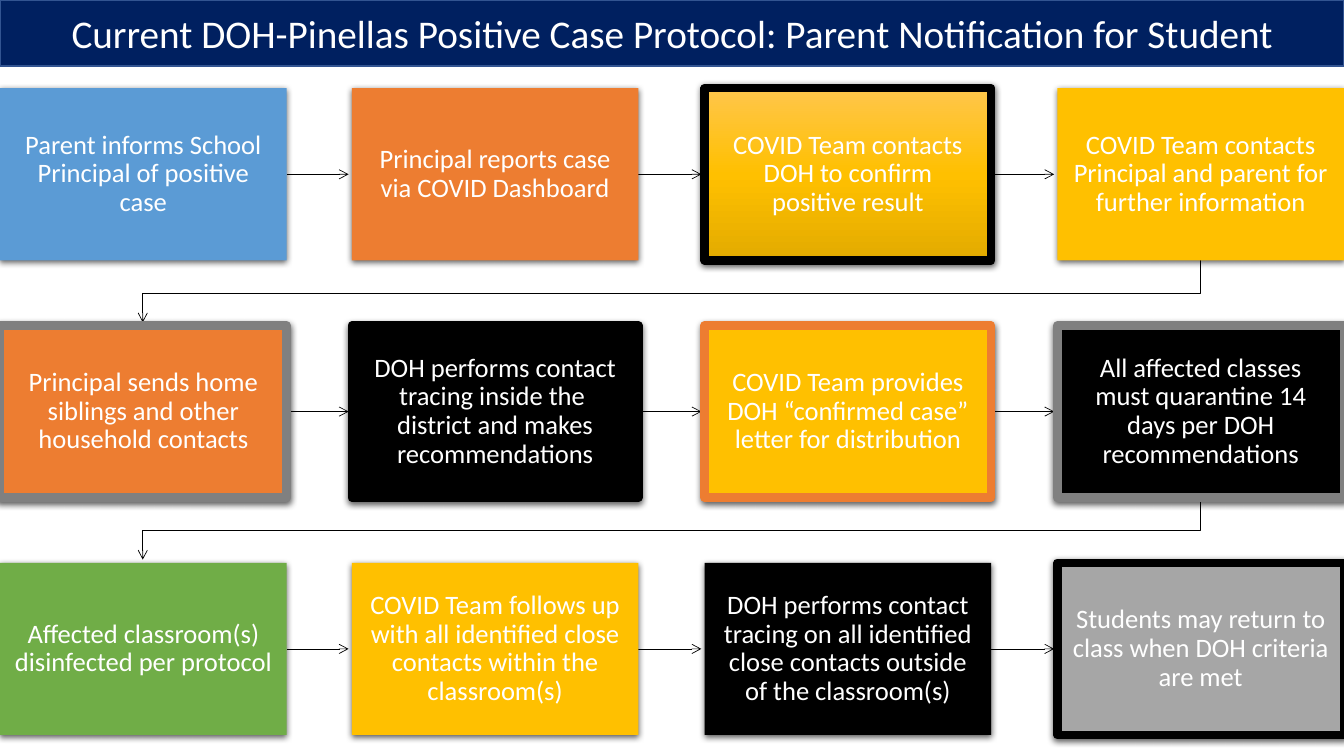
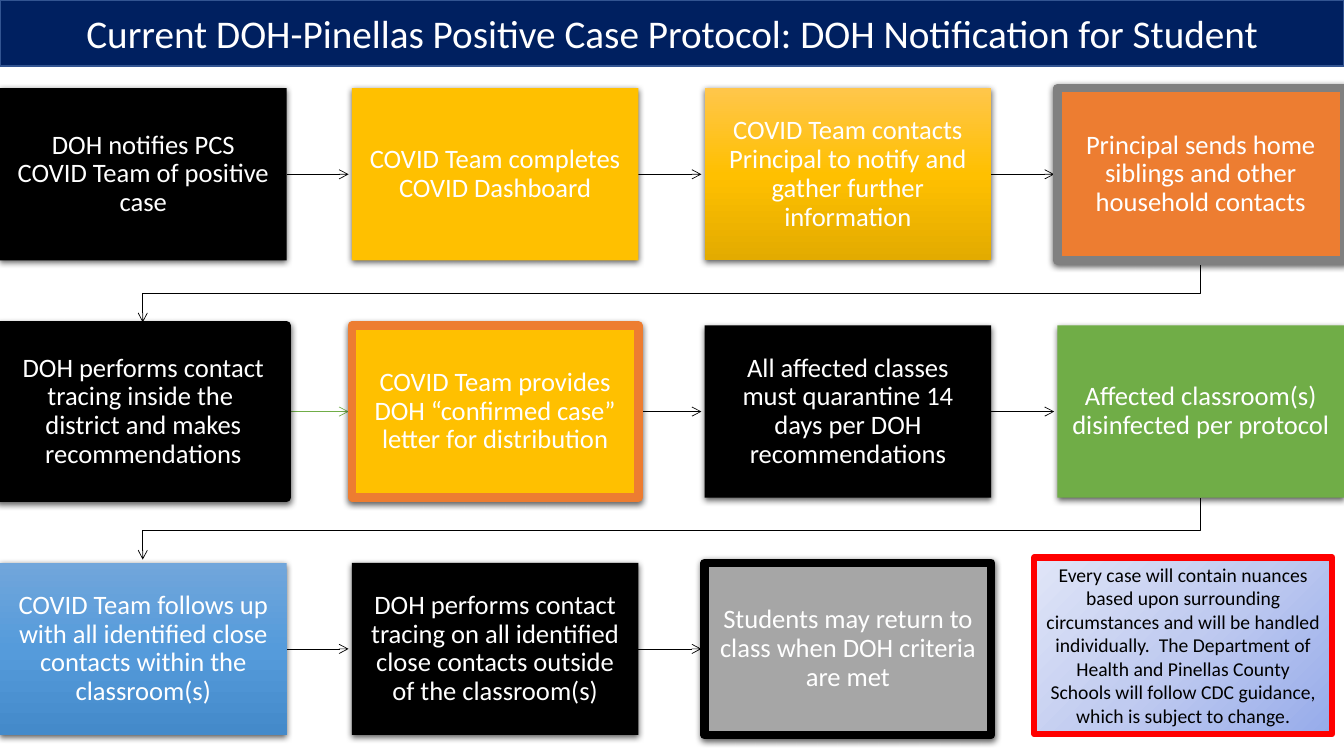
import dataclasses
import typing

import lxml.etree
import pptx
import pptx.dml.color
import pptx.enum.shapes
import pptx.enum.text
import pptx.oxml.ns
import pptx.util

PX = 9525
WIDE, HIGH = 1280, 720
COLS = 4
CARD_W, CARD_H = 273, 164
TOP, STEP = 84, 226
GAP = STEP - CARD_H
SHORT = 3
FONT = "Calibri"

BLACK, WHITE = "000000", "FFFFFF"
NAVY, RIM, RED = "002060", "325491", "FF0000"
BLUE, ORANGE, GOLD, GREEN = "5B9BD5", "ED7D31", "FFC000", "70AD47"
GRAY, SILVER = "808080", "A6A6A6"

Anchor = pptx.enum.text.MSO_ANCHOR
qn = pptx.oxml.ns.qn


@dataclasses.dataclass(frozen=True)
class Blend:
    stops: tuple[str, str, str]
    angle: int = 90


Paint = typing.Union[str, Blend]
Point = tuple[int, int]


@dataclasses.dataclass(frozen=True)
class Card:
    text: str
    fill: Paint
    edge: typing.Optional[str] = None
    arrow: str = BLACK


GOLD_FADE = Blend(("FFC64B", GOLD, "E3AB00"))
BLUE_FADE = Blend(("71A6DB", "559BDB", "448ACA"))
NOTE_FADE = Blend(("96ABEA", "C0CBF0", "E0E5F7"), 225)

HOME = Card("Principal sends home siblings and other household contacts", ORANGE, GRAY)
TRACE = Card("DOH performs contact tracing inside the  district and makes recommendations", BLACK, BLACK)
LETTER = Card("COVID Team provides DOH “confirmed case” letter for distribution", GOLD, ORANGE)
STAY = Card("All affected classes must quarantine 14 days per DOH recommendations", BLACK)
CLEAN = Card("Affected classroom(s) disinfected per protocol", GREEN)
FOLLOW = Card("COVID Team follows up with all identified close contacts within the classroom(s)", GOLD)
OUTER = Card("DOH performs contact tracing on all identified close contacts outside of the classroom(s)", BLACK)
BACK = Card("Students may return to class when DOH criteria are met", SILVER, BLACK)

PARENT = [
    Card("Parent informs School Principal of positive case", BLUE),
    Card("Principal reports case via COVID Dashboard", ORANGE),
    Card("COVID Team contacts DOH to confirm positive result", GOLD_FADE, BLACK),
    Card("COVID Team contacts Principal and parent for further information", GOLD),
    HOME,
    TRACE,
    LETTER,
    dataclasses.replace(STAY, edge=GRAY),
    CLEAN,
    FOLLOW,
    OUTER,
    BACK,
]
HEALTH = [
    Card("DOH notifies PCS COVID Team of positive case", BLACK),
    Card("COVID Team completes COVID Dashboard", GOLD),
    Card("COVID Team contacts Principal to notify and gather further information", GOLD_FADE),
    HOME,
    dataclasses.replace(TRACE, arrow=GREEN),
    LETTER,
    STAY,
    CLEAN,
    dataclasses.replace(FOLLOW, fill=BLUE_FADE),
    OUTER,
    BACK,
]
NOTE = (
    "Every case will contain nuances based upon surrounding circumstances "
    "and will be handled individually.  The Department of Health and Pinellas "
    "County Schools will follow CDC guidance, which is subject to change."
)


def px(count: int) -> pptx.util.Emu:
    return pptx.util.Emu(count * PX)


def rgb(code: str) -> pptx.dml.color.RGBColor:
    return pptx.dml.color.RGBColor.from_string(code)


def add(parent, tag: str, **attrs: object):
    return lxml.etree.SubElement(parent, qn(tag), {key: str(val) for key, val in attrs.items()})


def paint(shape, fill: Paint) -> None:
    if isinstance(fill, str):
        shape.fill.solid()
        shape.fill.fore_color.rgb = rgb(fill)
        return
    shape.fill.gradient()
    shape.fill.gradient_angle = 360 - fill.angle
    stops = shape._element.spPr.find(f"{qn('a:gradFill')}/{qn('a:gsLst')}")
    for old in list(stops):
        stops.remove(old)
    for rank, code in enumerate(fill.stops):
        stop = add(stops, "a:gs", pos=rank * 50000)
        add(stop, "a:srgbClr", val=code)


def box(slide, left: int, top: int, wide: int, high: int, fill: Paint,
        edge: typing.Optional[str] = None, weight: float = 1):
    shape = slide.shapes.add_shape(
        pptx.enum.shapes.MSO_SHAPE.RECTANGLE, px(left), px(top), px(wide), px(high))
    shape.shadow.inherit = False
    paint(shape, fill)
    if edge:
        shape.line.color.rgb = rgb(edge)
        shape.line.width = pptx.util.Pt(weight)
    else:
        shape.line.fill.background()
    return shape


def shade(shape) -> None:
    effects = shape._element.spPr.find(qn("a:effectLst"))
    cast = add(effects, "a:outerShdw", blurRad=57150, dist=19050, dir=5400000,
               algn="ctr", rotWithShape=0)
    add(add(cast, "a:srgbClr", val=BLACK), "a:alpha", val=63000)


def write(shape, text: str, *, size: int, color: str = WHITE, anchor=Anchor.MIDDLE,
          inset: typing.Optional[int] = None, pitch: float = 1.0) -> None:
    frame = shape.text_frame
    frame.word_wrap = True
    frame.vertical_anchor = anchor
    if inset is not None:
        frame.margin_left = frame.margin_right = px(inset)
        frame.margin_top = frame.margin_bottom = px(inset)
    para = frame.paragraphs[0]
    para.alignment = pptx.enum.text.PP_ALIGN.CENTER
    para.line_spacing = pitch
    run = para.add_run()
    run.text = text
    run.font.name = FONT
    run.font.size = pptx.util.Pt(size)
    run.font.color.rgb = rgb(color)


def tip(line, color: str) -> None:
    line.line.color.rgb = rgb(color)
    line.line.width = pptx.util.Pt(0.5)
    add(line.line._get_or_add_ln(), "a:tailEnd", type="arrow")


def link(slide, start: Point, end: Point, color: str) -> None:
    line = slide.shapes.add_connector(
        pptx.enum.shapes.MSO_CONNECTOR.STRAIGHT, *map(px, start + end))
    tip(line, color)
    add(line._element.spPr, "a:effectLst")


def bend(slide, points: list[Point], color: str) -> None:
    maker = slide.shapes.build_freeform(*points[0], scale=PX)
    maker.add_line_segments(points[1:], close=False)
    line = maker.convert_to_shape()
    line.shadow.inherit = False
    line.fill.background()
    tip(line, color)


def place(rank: int) -> Point:
    row, col = divmod(rank, COLS)
    return (WIDE - CARD_W) * col // (COLS - 1), TOP + STEP * row


def join(slide, rank: int, color: str) -> None:
    left, top = place(rank)
    goal, below = place(rank + 1)
    if below == top:
        mid = top + CARD_H // 2
        link(slide, (left + CARD_W, mid), (goal - SHORT, mid), color)
        return
    start, end = left + CARD_W // 2, goal + CARD_W // 2
    base = top + CARD_H
    turn = base + GAP // 2
    bend(slide, [(start, base), (start, turn), (end, turn), (end, below - SHORT)], color)


def chart(deck, title: str, cards: list[Card]):
    slide = deck.slides.add_slide(deck.slide_layouts[6])
    for rank, card in enumerate(cards):
        if rank < len(cards) - 1:
            join(slide, rank, card.arrow)
        shape = box(slide, *place(rank), CARD_W, CARD_H, card.fill, card.edge, 6)
        shade(shape)
        write(shape, card.text, size=19, inset=14, pitch=0.9)
    band = box(slide, 0, 0, WIDE, 63, NAVY, RIM)
    write(band, f"Current DOH-Pinellas Positive Case Protocol: {title}", size=28)
    return slide


def main() -> None:
    deck = pptx.Presentation()
    deck.slide_width, deck.slide_height = px(WIDE), px(HIGH)
    chart(deck, "Parent Notification for Student", PARENT)
    slide = chart(deck, "DOH Notification for Student", HEALTH)
    note = box(slide, 985, 531, 284, 168, NOTE_FADE, RED, 4.5)
    write(note, NOTE, size=14, color=BLACK, anchor=Anchor.TOP)
    deck.save("out.pptx")


if __name__ == "__main__":
    main()
